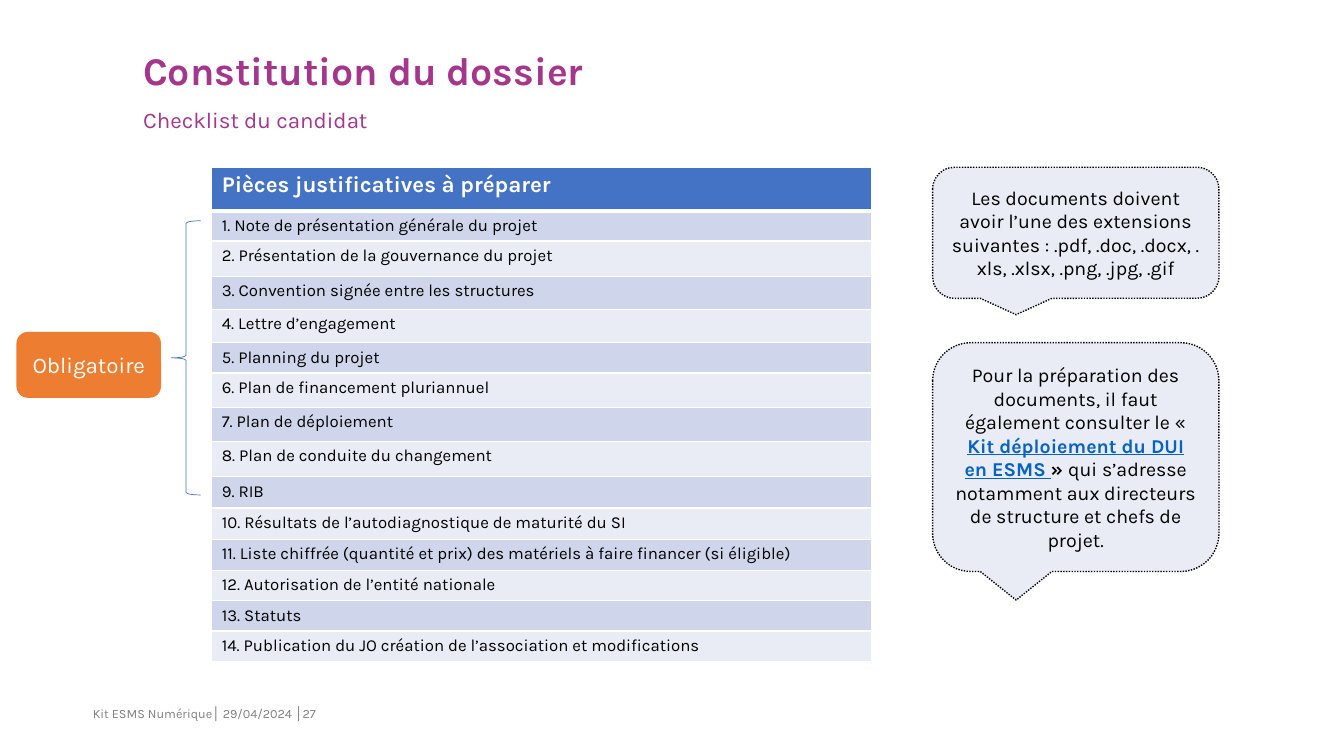
from lxml.etree import SubElement
from pptx import Presentation
from pptx.dml.color import RGBColor
from pptx.enum.dml import MSO_LINE
from pptx.enum.shapes import MSO_SHAPE
from pptx.enum.text import MSO_ANCHOR, PP_ALIGN
from pptx.oxml.ns import qn
from pptx.util import Inches, Pt

PURPLE, BLUE, ORANGE = "A4368C", "4472C4", "ED7D31"
DARK, PALE, WHITE, BLACK = "CFD5EA", "E9EBF5", "FFFFFF", "000000"
GREY, LINK = "808080", "0563C1"

HEAD = "Pièces justificatives à préparer"
ITEMS = [
    ("Note de présentation générale du projet", 0.3),
    ("Présentation de la gouvernance du projet", 0.35),
    ("Convention signée entre les structures", 0.33),
    ("Lettre d’engagement", 0.33),
    ("Planning du projet", 0.3),
    ("Plan de financement pluriannuel", 0.34),
    ("Plan de déploiement", 0.34),
    ("Plan de conduite du changement", 0.35),
    ("RIB", 0.31),
    ("Résultats de l’autodiagnostique de maturité du SI", 0.31),
    ("Liste chiffrée (quantité et prix) des matériels à faire financer (si éligible)", 0.31),
    ("Autorisation de l’entité nationale", 0.29),
    ("Statuts", 0.29),
    ("Publication du JO création de l’association et modifications", 0.29),
]
FORMATS = [("Les documents doivent avoir l’une des extensions suivantes : "
            ".pdf, .doc, .docx, .xls, .xlsx, .png, .jpg, .gif", BLACK, False)]
ADVICE = [
    ("Pour la préparation des documents, il faut également consulter le « ", BLACK, False),
    ("Kit déploiement du DUI en ESMS ", LINK, True),
    ("» ", BLACK, True),
    ("qui s’adresse notamment aux directeurs de structure et chefs de projet.", BLACK, False),
]


def color(code):
    return RGBColor.from_string(code)


def style(font, size, code, bold=False):
    font.name, font.size, font.bold = "Karla", Pt(size), bold
    font.color.rgb = color(code)


def place(shape, box):
    shape.left, shape.top, shape.width, shape.height = map(Inches, box)


def write(shape, text, size, code, bold=False, pad=0):
    frame = shape.text_frame
    frame.word_wrap = True
    frame.vertical_anchor = MSO_ANCHOR.TOP
    frame.margin_left = Inches(0)
    frame.margin_right = Inches(0.1 if pad else 0)
    frame.margin_top = frame.margin_bottom = Inches(pad)
    frame.text = text
    para = frame.paragraphs[0]
    para.alignment = PP_ALIGN.LEFT
    style(para.font, size, code, bold)
    return para


def add_heading(slide, box):
    left, top, width, height = box
    title = slide.shapes.title
    place(title, (left, top, width, 0.42))
    write(title, "Constitution du dossier", 28, PURPLE, True).line_spacing = 0.9
    sub = slide.shapes.add_textbox(0, 0, 0, 0)
    place(sub, (left, top + 0.57, width, height - 0.57))
    write(sub, "Checklist du candidat", 16, PURPLE).line_spacing = 0.9


def add_edges(cell, base):
    props = cell._tc.get_or_add_tcPr()
    for side, width in zip("LRTB", (1, 1, 1, base)):
        edge = SubElement(props, qn(f"a:ln{side}"), w=str(Pt(width)))
        fill = SubElement(edge, qn("a:solidFill"))
        SubElement(fill, qn("a:srgbClr"), val=WHITE)


def add_list(slide, box):
    rows = [(HEAD, 0.43)] + [(f"{num}. {name}", tall)
                             for num, (name, tall) in enumerate(ITEMS, 1)]
    table = slide.shapes.add_table(len(rows), 1, *map(Inches, box)).table
    for num, (text, tall) in enumerate(rows):
        table.rows[num].height = Inches(tall)
        cell = table.cell(num, 0)
        add_edges(cell, 1 if num else 3)
        cell.fill.solid()
        cell.fill.fore_color.rgb = color((DARK if num % 2 else PALE) if num else BLUE)
        cell.text = text
        font = cell.text_frame.paragraphs[0].font
        if num:
            style(font, 12, BLACK)
        else:
            style(font, 16, WHITE, True)


def add_panel(slide, kind, box, fill, line):
    shape = slide.shapes.add_shape(kind, *map(Inches, box))
    shape.shadow.inherit = False
    shape.fill.solid()
    shape.fill.fore_color.rgb = color(fill)
    shape.line.color.rgb = color(line)
    shape.line.width = Pt(1)
    frame = shape.text_frame
    frame.word_wrap = True
    frame.vertical_anchor = MSO_ANCHOR.MIDDLE
    frame.paragraphs[0].alignment = PP_ALIGN.CENTER
    return shape


def add_need(slide, box):
    left, top, width, height = box
    tag = add_panel(slide, MSO_SHAPE.ROUNDED_RECTANGLE,
                    (left, top + 1.11, 1.42, 0.64), ORANGE, ORANGE)
    para = tag.text_frame.paragraphs[0]
    para.text = "Obligatoire"
    style(para.font, 16, WHITE)
    brace = slide.shapes.add_shape(MSO_SHAPE.LEFT_BRACE, 0, 0, 0, 0)
    place(brace, (left + width - 0.29, top, 0.29, height))
    brace.shadow.inherit = False
    brace.fill.background()
    brace.line.color.rgb = color(BLUE)
    brace.line.width = Pt(0.5)


def add_bubble(slide, box, parts):
    bubble = add_panel(slide, MSO_SHAPE.ROUNDED_RECTANGULAR_CALLOUT, box, PALE, BLACK)
    bubble.line.dash_style = MSO_LINE.ROUND_DOT
    para = bubble.text_frame.paragraphs[0]
    for text, code, bold in parts:
        run = para.add_run()
        run.text = text
        style(run.font, 14, code, bold)
        if code == LINK:
            run.font.underline = True


def add_footer(slide, box):
    foot = slide.shapes.add_textbox(*map(Inches, box))
    write(foot, "Kit ESMS Numérique│ 29/04/2024 │27", 9, GREY, pad=0.05)


def main():
    deck = Presentation()
    deck.slide_width, deck.slide_height = Inches(13.33), Inches(7.5)
    slide = deck.slides.add_slide(deck.slide_layouts[5])
    add_footer(slide, (0.92, 6.95, 5.75, 0.4))
    add_heading(slide, (1.42, 0.51, 11.08, 0.81))
    add_list(slide, (2.1, 1.66, 6.54, 4.87))
    add_need(slide, (0.17, 2.19, 1.82, 2.72))
    add_bubble(slide, (9.25, 1.66, 2.84, 1.3), FORMATS)
    add_bubble(slide, (9.25, 3.4, 2.84, 2.27), ADVICE)
    deck.save("out.pptx")


if __name__ == "__main__":
    main()
